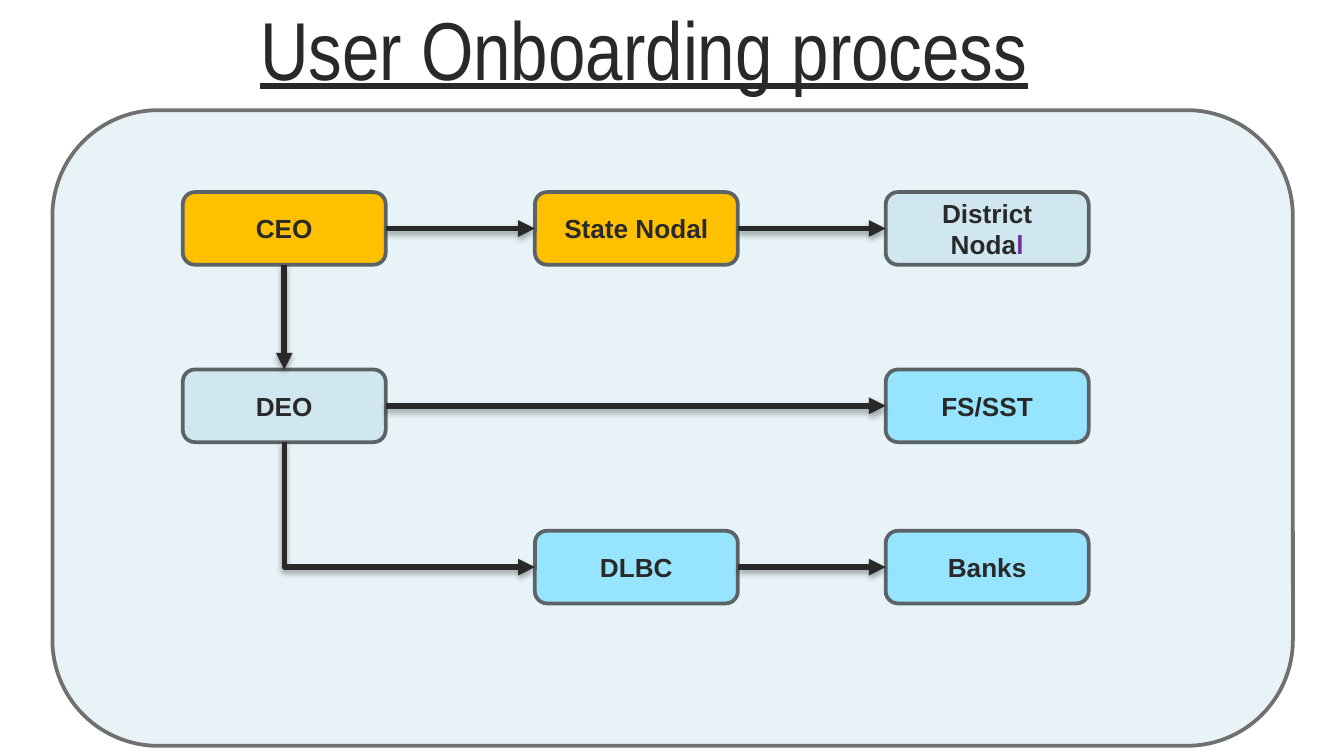
"""Build the user onboarding process flow slide."""
from lxml import etree
from pptx import Presentation, oxml, util as u
from pptx.dml.color import RGBColor
from pptx.enum import shapes, text
from pptx.oxml import ns

INK = RGBColor(0x2A, 0x29, 0x29)
PURPLE = RGBColor(0x70, 0x30, 0xA0)
PANEL = RGBColor(0xE7, 0xF3, 0xF7)
PANEL_EDGE = RGBColor(0x70, 0x70, 0x70)
ROLE_EDGE = RGBColor(0x5C, 0x63, 0x67)
AMBER = RGBColor(0xFF, 0xC0, 0x00)
PALE = RGBColor(0xD0, 0xE7, 0xF0)
SKY = RGBColor(0x97, 0xE4, 0xFF)

COLUMNS = [u.Inches(x) for x in (1.36, 3.98, 6.59)]
ROWS = [u.Inches(y) for y in (1.43, 2.75, 3.95)]
ROLE_WIDTH, ROLE_HEIGHT = u.Inches(1.51), u.Inches(0.54)
TOP, LEFT, BOTTOM, RIGHT = range(4)

ROLES = [
    (["CEO"], 0, 0, AMBER),
    (["State Nodal"], 1, 0, AMBER),
    (["District Noda", "l"], 2, 0, PALE),
    (["DEO"], 0, 1, PALE),
    (["FS/SST"], 2, 1, SKY),
    (["DLBC"], 1, 2, SKY),
    (["Banks"], 2, 2, SKY),
]
STEPS = [
    ("CEO", RIGHT, "State Nodal", LEFT),
    ("State Nodal", RIGHT, "District Nodal", LEFT),
    ("DEO", RIGHT, "FS/SST", LEFT),
    ("DEO", BOTTOM, "DLBC", LEFT),
    ("CEO", BOTTOM, "DEO", TOP),
    ("DLBC", RIGHT, "Banks", LEFT),
]
SHADOW = (
    f'<a:effectLst {ns.nsdecls("a")}>'
    '<a:outerShdw blurRad="40000" dist="23000" dir="5400000" rotWithShape="0">'
    '<a:srgbClr val="000000"><a:alpha val="35000"/></a:srgbClr>'
    '</a:outerShdw></a:effectLst>'
)


def add_rounded(left, top, width, height, fill, edge):
    """Add a flat rounded rectangle with a two-point edge."""
    box = slide.shapes.add_shape(
        shapes.MSO_SHAPE.ROUNDED_RECTANGLE, left, top, width, height)
    box.shadow.inherit = False
    box.fill.solid()
    box.fill.fore_color.rgb = fill
    box.line.color.rgb = edge
    box.line.width = u.Pt(2)
    return box


def style(paragraph, face, size):
    """Centre a paragraph and give it an ink-coloured font."""
    paragraph.alignment = text.PP_ALIGN.CENTER
    paragraph.font.name = face
    paragraph.font.size = u.Pt(size)
    paragraph.font.color.rgb = INK


deck = Presentation()
deck.slide_width = u.Inches(10)
deck.slide_height = deck.slide_width * 9 // 16
slide = deck.slides.add_slide(deck.slide_layouts.get_by_name("Title Only"))

title = slide.shapes.title
title.left, title.top = u.Inches(0.58), u.Inches(0.04)
title.width, title.height = u.Inches(8.43), u.Inches(0.63)
heading = title.text_frame
heading.text = "User Onboarding process"
heading.auto_size = text.MSO_AUTO_SIZE.NONE
heading.vertical_anchor = text.MSO_ANCHOR.MIDDLE
heading.margin_left = heading.margin_right = u.Inches(0.1)
heading.margin_top = heading.margin_bottom = u.Inches(0.1)
style(heading.paragraphs[0], "Arial Narrow", 44)
heading.paragraphs[0].font.underline = True

add_rounded(u.Inches(0.39), u.Inches(0.82), u.Inches(9.23), u.Inches(4.73),
            PANEL, PANEL_EDGE)

roles = {}
for parts, column, row, fill in ROLES:
    role = add_rounded(COLUMNS[column], ROWS[row], ROLE_WIDTH, ROLE_HEIGHT,
                       fill, ROLE_EDGE)
    label = role.text_frame.paragraphs[0]
    style(label, "Arial", 14)
    label.font.bold = True
    for part, color in zip(parts, (INK, PURPLE)):
        run = label.add_run()
        run.text = part
        run.font.color.rgb = color
    roles["".join(parts)] = role

for source, exit_side, target, entry_side in STEPS:
    bent = exit_side == BOTTOM and entry_side == LEFT
    kind = shapes.MSO_CONNECTOR.ELBOW if bent else shapes.MSO_CONNECTOR.STRAIGHT
    arrow = slide.shapes.add_connector(kind, 0, 0, 0, 0)
    arrow.begin_connect(roles[source], exit_side)
    arrow.end_connect(roles[target], entry_side)
    arrow.line.color.rgb = INK
    arrow.line.width = u.Pt(3)
    properties = arrow.element.spPr
    etree.SubElement(properties.find(ns.qn("a:ln")), ns.qn("a:tailEnd"), type="triangle")
    properties.append(oxml.parse_xml(SHADOW))
    if bent:
        across, down = arrow.width, arrow.height
        arrow.left += (across - down) // 2
        arrow.top -= (across - down) // 2
        arrow.width, arrow.height = down, across
        frame = properties.find(ns.qn("a:xfrm"))
        frame.set("rot", "16200000")
        frame.set("flipH", "1")
        properties.find(ns.qn("a:prstGeom")).set("prst", "bentConnector2")

deck.save("out.pptx")
